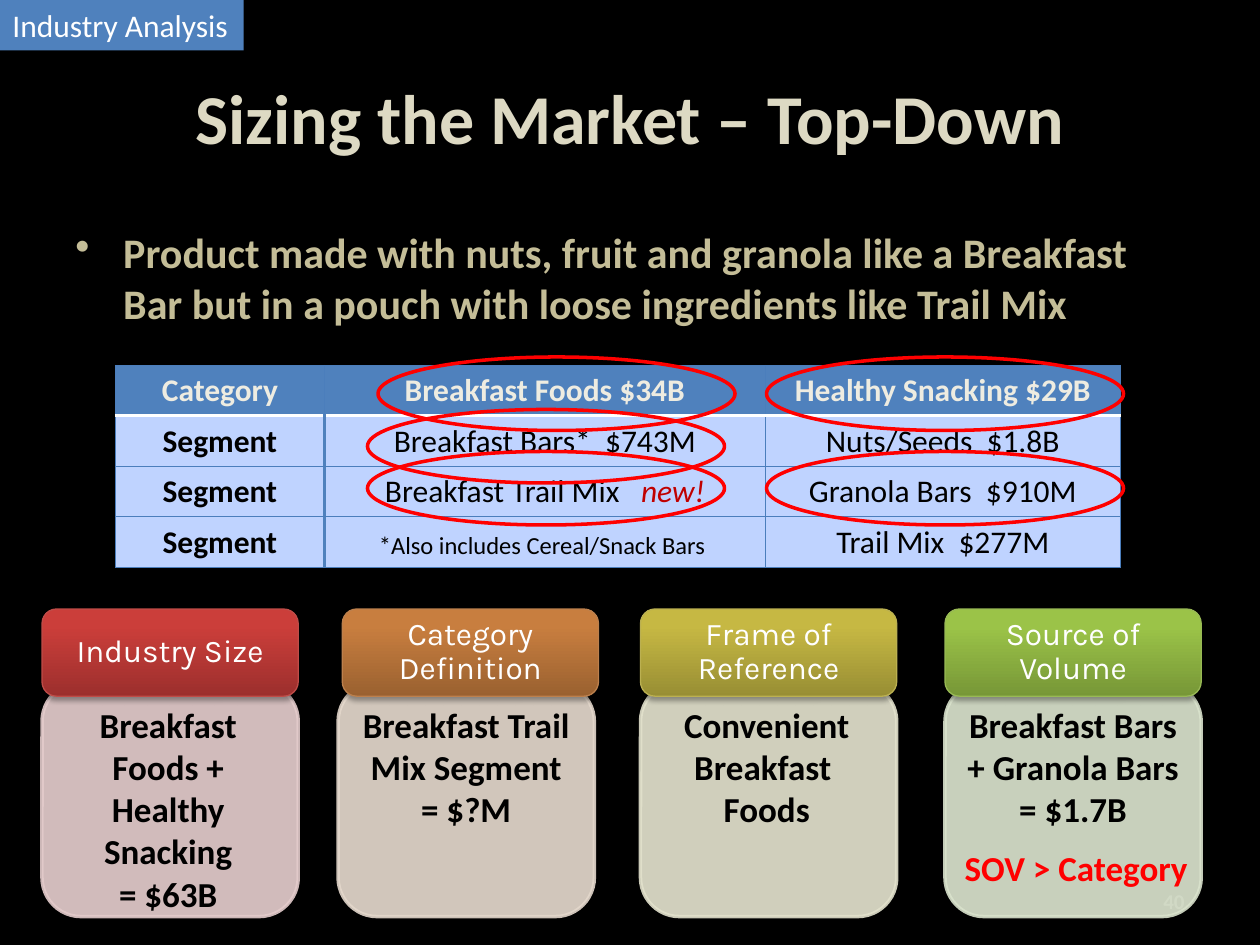
from pptx import Presentation
from pptx import util as u
from pptx.dml.color import RGBColor
from pptx.enum import shapes, text
from pptx.oxml import parse_xml
from pptx.oxml.ns import nsdecls, qn

C = {"black": "000000", "white": "FFFFFF", "blue": "4F81BD", "edge": "4B7EBC",
     "cell": "BFD3FF", "head": "EEECE1", "title": "DDD9C3", "body": "C4BD97",
     "grey": "8C8C8C", "red": "FF0000", "new": "C00000"}
AL, AN, SH = text.PP_ALIGN, text.MSO_ANCHOR, shapes.MSO_SHAPE

prs = Presentation()
prs.slide_width, prs.slide_height = u.Inches(10), u.Inches(7.5)
COL, ROW = prs.slide_width / 120, prs.slide_height / 90
s = prs.slides.add_slide(prs.slide_layouts[6])
s.background.fill.solid()
s.background.fill.fore_color.rgb = RGBColor.from_string(C["black"])


def grid(x, y, w, h):
    return int(x * COL), int(y * ROW), int(w * COL), int(h * ROW)


def write(tf, txt, size=18, color="black", bold=False, italic=False, font="Calibri",
          align=AL.CENTER, anchor=AN.TOP, wrap=True, spacing=None, same=False):
    tf.word_wrap, tf.vertical_anchor = wrap, anchor
    p = tf.paragraphs[-1] if same or not tf.text else tf.add_paragraph()
    p.alignment = align
    if spacing:
        p.line_spacing = spacing
    r = p.add_run()
    r.text = txt
    r.font.name, r.font.size, r.font.bold, r.font.italic = font, u.Pt(size), bold, italic
    r.font.color.rgb = RGBColor.from_string(C[color])
    return p


texts = [
    ((86, 83.4, 28, 4.8), "40", dict(size=12, color="grey", bold=True, align=AL.RIGHT, anchor=AN.MIDDLE)),
    ((6, 3.6, 108, 15), "Sizing the Market – Top-Down",
     dict(size=40, color="title", bold=True, anchor=AN.MIDDLE)),
    ((6, 21, 108, 59.4), "Product made with nuts, fruit and granola like a Breakfast Bar "
     "but in a pouch with loose ingredients like Trail Mix",
     dict(size=24, color="body", bold=True, align=AL.LEFT)),
]
for box, txt, fmt in texts:
    p = write(s.shapes.add_textbox(*grid(*box)).text_frame, txt, **fmt)
p.space_before = u.Pt(5)
pPr = p._p.get_or_add_pPr()
pPr.set("marL", str(u.Inches(0.38)))
pPr.set("indent", str(-u.Inches(0.38)))
pPr.append(parse_xml(f'<a:buChar {nsdecls("a")} char="•"/>'))

rows = [["Category", "Breakfast Foods $34B", "Healthy Snacking $29B"],
        ["Segment", "Breakfast Bars*  $743M", "Nuts/Seeds  $1.8B"],
        ["Segment", "Breakfast Trail Mix   ", "Granola Bars  $910M"],
        ["Segment", "*Also includes Cereal/Snack Bars ", "Trail Mix  $277M"]]
widths = [19.9, 42, 33.8]
tbl = s.shapes.add_table(4, 3, *grid(11, 34.8, sum(widths), 19.2)).table
for col, w in zip(tbl.columns, widths):
    col.width = int(w * COL)
for i, row in enumerate(rows):
    for j, txt in enumerate(row):
        cell = tbl.cell(i, j)
        cell.fill.solid()
        cell.fill.fore_color.rgb = RGBColor.from_string(C["cell" if i else "blue"])
        note = txt.startswith("*")
        write(cell.text_frame, txt, size=14 if note else 18,
              color="black" if i else "head", bold=i == 0 or j == 0)
        cell.vertical_anchor = AN.BOTTOM if note else AN.TOP
        lines = dict.fromkeys("LRTB", ("edge", 0.75))
        if i == 0:
            lines["B"] = ("white", 2)
        elif j == 0:
            lines["R"] = ("blue", 2)
        if i == 1 and j:
            lines["T"] = ("white", 2)
        if i and j == 1:
            lines["L"] = ("blue", 2)
        for k, (side, (color, pt)) in enumerate(lines.items()):
            cell._tc.get_or_add_tcPr().insert(k, parse_xml(
                f'<a:ln{side} {nsdecls("a")} w="{u.Pt(pt)}"><a:solidFill>'
                f'<a:srgbClr val="{C[color]}"/></a:solidFill></a:ln{side}>'))
write(tbl.cell(2, 1).text_frame, "new!", color="new", italic=True, same=True)

sp = s.shapes.add_shape(SH.RECTANGLE, *grid(0, 0, 23.2, 4.8))
sp.shadow.inherit = False
sp.fill.solid()
sp.fill.fore_color.rgb = RGBColor.from_string(C["blue"])
sp.line.fill.background()
write(sp.text_frame, "Industry Analysis", color="white", align=AL.LEFT, anchor=AN.MIDDLE, wrap=False)

cards = [
    (4, 4, "Industry Size", ["Breakfast Foods + Healthy Snacking", "= $63B"],
     "E8D0D0", "E3CBCB", "9C2F2D", "CB3E3A", "BF4C48", 0.11),
    (32.2, 32.6, "Category Definition", ["Breakfast Trail Mix Segment", "= $?M"],
     "E8DCD0", "E3D7CB", "9A6130", "C87E3F", "BC804D", 0.08),
    (61, 61, "Frame of Reference", ["Convenient Breakfast  Foods"],
     "E7E6D1", "E2E1CC", "988E34", "C6B843", "BBB051", 0.11),
    (90, 90, "Source of Volume", ["Breakfast Bars ", "+ Granola Bars", "= $1.7B"],
     "DEE7D1", "D9E2CC", "779737", "9BC348", "98B955", 0.08),
]
for x, hx, head, body, fill, line, dark, light, rim, right in cards:
    card = s.shapes.add_shape(SH.ROUNDED_RECTANGLE, *grid(x, 65, 24.4, 22.3))
    card.fill.solid()
    card.fill.fore_color.rgb = RGBColor.from_string(fill)
    card.line.color.rgb, card.line.width = RGBColor.from_string(line), u.Pt(2)
    for clr in card._element.spPr.iter(qn("a:srgbClr")):
        clr.append(parse_xml(f'<a:alpha {nsdecls("a")} val="90000"/>'))
    tf = card.text_frame
    tf.margin_left = tf.margin_top = u.Inches(0.08)
    tf.margin_right, tf.margin_bottom = u.Inches(right), u.Inches(0.12)
    for txt in body:
        write(tf, txt, size=20, bold=True)

    tab = s.shapes.add_shape(SH.ROUNDED_RECTANGLE, *grid(hx, 58, 24.4, 8.3))
    tab.fill.gradient()
    tab.fill.gradient_angle = 90
    for stop, color, pos in zip(tab.fill.gradient_stops, (dark, light), (0, 0.8)):
        stop.color.rgb, stop.position = RGBColor.from_string(color), pos
    tab.line.color.rgb, tab.line.width = RGBColor.from_string(rim), u.Pt(0.75)
    tf = tab.text_frame
    tf.margin_left = tf.margin_right = u.Inches(0.11)
    tf.margin_top = tf.margin_bottom = u.Inches(0.06)
    write(tf, head, color="white", font="Karla", anchor=AN.MIDDLE, spacing=0.9)

    for sp in (card, tab):
        sp._element.spPr.append(parse_xml(
            f'<a:effectLst {nsdecls("a")}><a:outerShdw blurRad="{u.Pt(3.1)}" dist="{u.Pt(1.8)}" '
            f'dir="5400000" rotWithShape="0"><a:srgbClr val="{C["black"]}"><a:alpha val="35000"/>'
            '</a:srgbClr></a:outerShdw></a:effectLst>'))

for x, y in [(36, 34), (73, 34), (35, 43), (35, 39), (73, 43)]:
    ring = s.shapes.add_shape(SH.OVAL, *grid(x, y, 34, 7))
    ring.shadow.inherit = False
    ring.fill.background()
    ring.line.color.rgb, ring.line.width = RGBColor.from_string(C["red"]), u.Pt(2)

sp = s.shapes.add_textbox(*grid(88, 80, 29, 5.3))
write(sp.text_frame, "SOV > Category", size=20, color="red", bold=True)

prs.save("out.pptx")
